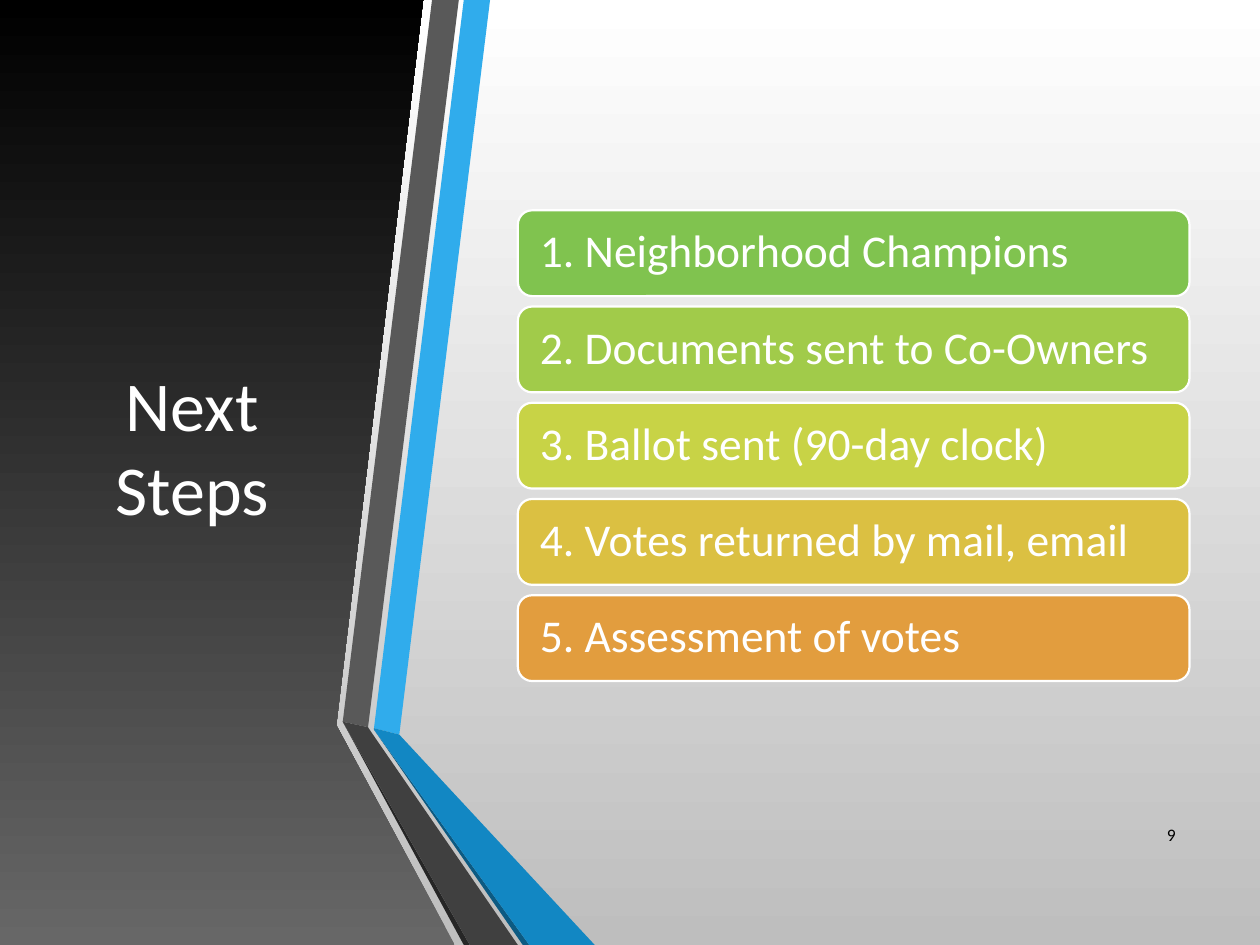
import dataclasses
import typing

import pptx
import pptx.dml.color
import pptx.enum.shapes
import pptx.enum.text
import pptx.util

Cm = pptx.util.Cm
Pt = pptx.util.Pt
Align = pptx.enum.text.PP_ALIGN
Point = typing.Tuple[float, float]

FONT = "Calibri"
WIDTH, HEIGHT = 25.4, 19.05
COLORS = {
    "white": "FFFFFF", "silver": "BEBEBE", "black": "000000", "smoke": "676767",
    "blue": "30ACEC", "mid_blue": "1287C3", "deep_blue": "0C5A82",
    "gray": "595959", "mid_gray": "404040", "deep_gray": "262626",
    "green": "80C34F", "lime": "A1CB4A", "yellow": "C8D346",
    "gold": "DBC042", "orange": "E29D3E",
}


@dataclasses.dataclass
class Ribbon:
    color: str
    points: typing.List[Point]


@dataclasses.dataclass
class Step:
    text: str
    color: str


RIBBONS = [
    Ribbon("blue", [(7.54, 14.68), (8.05, 14.81), (9.88, 0), (9.35, 0)]),
    Ribbon("gray", [(9.25, 0), (8.71, 0), (6.91, 14.55), (7.42, 14.66)]),
    Ribbon("deep_gray", [(6.91, 14.55), (9.35, HEIGHT), (9.47, HEIGHT)]),
    Ribbon("deep_blue", [(7.54, 14.71), (10.54, HEIGHT), (10.67, HEIGHT)]),
    Ribbon("mid_blue", [(7.54, 14.71), (10.67, HEIGHT), (11.99, HEIGHT),
                        (8.05, 14.81), (7.54, 14.68)]),
    Ribbon("mid_gray", [(10.44, HEIGHT), (7.52, 14.81), (7.42, 14.66),
                        (6.91, 14.55), (9.47, HEIGHT)]),
]
PANEL = [(0, 0), (8.53, 0), (6.78, 14.62), (9.17, HEIGHT), (0, HEIGHT)]
STEPS = [
    Step("1. Neighborhood Champions", "green"),
    Step("2. Documents sent to Co-Owners", "lime"),
    Step("3. Ballot sent (90-day clock)", "yellow"),
    Step("4. Votes returned by mail, email", "gold"),
    Step("5. Assessment of votes", "orange"),
]
BAR_LEFT, BAR_TOP, BAR_WIDTH, BAR_HEIGHT, BAR_PITCH = 10.44, 4.24, 13.54, 1.73, 1.94


def rgb(name: str) -> pptx.dml.color.RGBColor:
    return pptx.dml.color.RGBColor.from_string(COLORS[name])


def fill_solid(shape, color: str) -> None:
    shape.fill.solid()
    shape.fill.fore_color.rgb = rgb(color)


def fill_gradient(fill, start: str, end: str, angle: int) -> None:
    """Angle runs counter-clockwise: 90 is upward, 270 is downward."""
    fill.gradient()
    fill.gradient_angle = angle
    for stop, color in zip(fill.gradient_stops, (start, end)):
        stop.color.rgb = rgb(color)


def add_polygon(page, points: typing.List[Point]):
    corners = [(Cm(x), Cm(y)) for x, y in points]
    builder = page.shapes.build_freeform(*corners[0])
    builder.add_line_segments(corners[1:], close=True)
    shape = builder.convert_to_shape()
    shape.shadow.inherit = False
    shape.line.fill.background()
    return shape


def write_text(shape, text: str, size: float, color: str, align):
    frame = shape.text_frame
    frame.text = text
    frame.word_wrap = True
    frame.auto_size = pptx.enum.text.MSO_AUTO_SIZE.NONE
    frame.vertical_anchor = pptx.enum.text.MSO_ANCHOR.MIDDLE
    para = frame.paragraphs[0]
    para.alignment = align
    font = para.runs[0].font
    font.name, font.size = FONT, Pt(size)
    font.color.rgb = rgb(color)
    return para


def add_step(page, step: Step, top: float) -> None:
    bar = page.shapes.add_shape(
        pptx.enum.shapes.MSO_SHAPE.ROUNDED_RECTANGLE,
        Cm(BAR_LEFT), Cm(top), Cm(BAR_WIDTH), Cm(BAR_HEIGHT))
    bar.shadow.inherit = False
    fill_solid(bar, step.color)
    bar.line.color.rgb = rgb("white")
    bar.line.width = Pt(1.25)
    para = write_text(bar, step.text, 26, "white", Align.LEFT)
    para.line_spacing = 0.9
    bar.text_frame.margin_left = Cm(0.36)
    bar.text_frame.margin_right = Cm(0.36)


def main() -> None:
    deck = pptx.Presentation()
    deck.slide_width, deck.slide_height = Cm(WIDTH), Cm(HEIGHT)
    page = deck.slides.add_slide(deck.slide_layouts[5])

    # Backdrop
    fill_gradient(page.background.fill, "white", "silver", 270)
    backdrop = page.shapes.add_shape(
        pptx.enum.shapes.MSO_SHAPE.RECTANGLE, 0, 0, Cm(WIDTH), Cm(HEIGHT))
    backdrop.shadow.inherit = False
    backdrop.line.fill.background()
    fill_gradient(backdrop.fill, "white", "silver", 270)

    # Dark panel with the title in front of it
    panel = add_polygon(page, PANEL)
    fill_gradient(panel.fill, "smoke", "black", 90)
    title = page.shapes.title
    title.left, title.top = Cm(1.12), Cm(1.9)
    title.width, title.height = Cm(5.51), Cm(14.17)
    write_text(title, "Next Steps", 40, "white", Align.CENTER)
    panel.element.addnext(title.element)

    # Folded ribbons
    for ribbon in RIBBONS:
        fill_solid(add_polygon(page, ribbon.points), ribbon.color)

    # Page number
    number = page.shapes.add_textbox(Cm(22.81), Cm(16.31), Cm(1.14), Cm(1.02))
    write_text(number, "9", 10, "black", Align.RIGHT)

    # Step bars
    for index, step in enumerate(STEPS):
        add_step(page, step, BAR_TOP + index * BAR_PITCH)

    deck.save("out.pptx")


if __name__ == "__main__":
    main()
